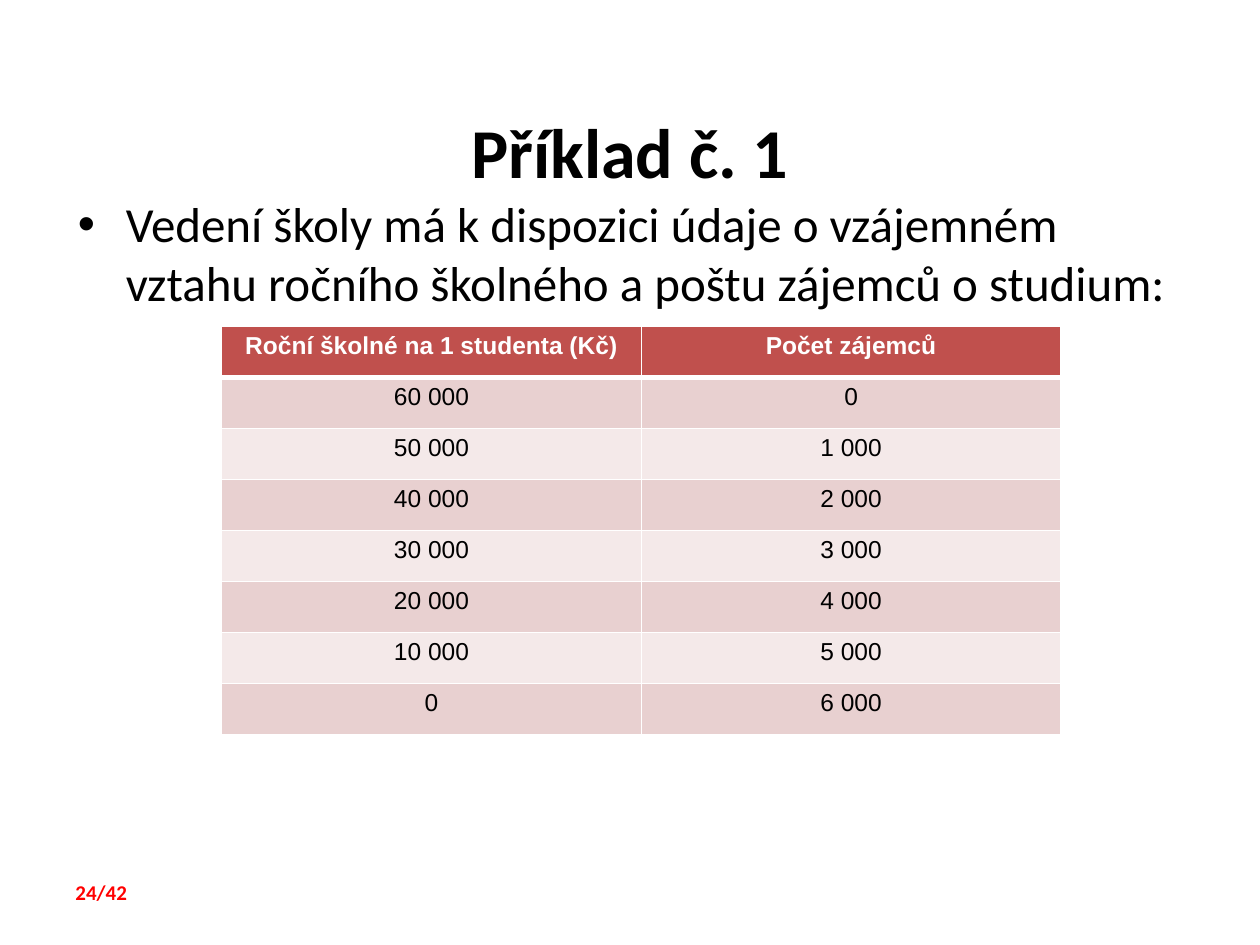
from lxml.etree import SubElement
from pptx import Presentation
from pptx.dml.color import RGBColor
from pptx.enum.text import MSO_ANCHOR as Anchor, PP_ALIGN as Align
from pptx.oxml.ns import qn
from pptx.util import Inches, Pt

# Content
TITLE = "Příklad č. 1"
BULLET = ("Vedení školy má k dispozici údaje o vzájemném "
          "vztahu ročního školného a poštu zájemců o studium:")
PAGE_NUMBER = "24/42"
ROWS = [
    ("Roční školné na 1 studenta (Kč)", "Počet zájemců"),
    ("60 000", "0"),
    ("50 000", "1 000"),
    ("40 000", "2 000"),
    ("30 000", "3 000"),
    ("20 000", "4 000"),
    ("10 000", "5 000"),
    ("0", "6 000"),
]

# Formats
COLORS = {"text": "000000", "page": "FF0000", "white": "FFFFFF",
          "header": "C0504D", "odd": "E8D0D0", "even": "F4E9E9"}
FONTS = {
    "title": {"name": "Calibri", "size": Pt(40), "bold": True},
    "body": {"name": "Calibri", "size": Pt(28), "bold": False},
    "page": {"name": "Calibri", "size": Pt(12), "bold": True},
    "header": {"name": "Arial", "size": Pt(14), "bold": True},
    "cell": {"name": "Arial", "size": Pt(14), "bold": False},
}
TABLE_LEFT, TABLE_TOP = 1.76, 2.59
COLUMN_WIDTH, ROW_HEIGHT = 3.33, 0.405


def rgb(color):
    return RGBColor.from_string(COLORS[color])


def write(paragraph, text, font, color, align=Align.LEFT):
    paragraph.text = text
    paragraph.alignment = align
    for name, value in FONTS[font].items():
        setattr(paragraph.font, name, value)
    paragraph.font.color.rgb = rgb(color)


def add_text_box(slide, left, top, width, height, anchor=Anchor.TOP):
    box = slide.shapes.add_textbox(*map(Inches, (left, top, width, height)))
    box.text_frame.word_wrap = True
    box.text_frame.vertical_anchor = anchor
    return box.text_frame.paragraphs[0]


def add_bullet(paragraph, margin, indent):
    properties = paragraph._p.get_or_add_pPr()
    properties.set("marL", str(Inches(margin)))
    properties.set("indent", str(Inches(indent)))
    SubElement(properties, qn("a:buFont"), typeface="Arial")
    SubElement(properties, qn("a:buChar"), char="•")


def add_borders(cell, widths):
    properties = cell._tc.get_or_add_tcPr()
    for side, width in widths.items():
        line = SubElement(properties, qn(f"a:ln{side}"), w=str(Pt(width)))
        fill = SubElement(line, qn("a:solidFill"))
        SubElement(fill, qn("a:srgbClr"), val=COLORS["white"])


def add_tuition_table(slide):
    column_count = len(ROWS[0])
    frame = slide.shapes.add_table(
        len(ROWS), column_count, Inches(TABLE_LEFT), Inches(TABLE_TOP),
        Inches(COLUMN_WIDTH * column_count), Inches(ROW_HEIGHT * len(ROWS)))
    table = frame.table
    for r, row in enumerate(ROWS):
        is_header = r == 0
        fill = "header" if is_header else "odd" if r % 2 else "even"
        font, color = ("header", "white") if is_header else ("cell", "text")
        borders = {"L": 1, "R": 1, "T": 3 if r == 1 else 1,
                   "B": 3 if is_header else 1}
        for c, text in enumerate(row):
            cell = table.cell(r, c)
            add_borders(cell, borders)
            cell.fill.solid()
            cell.fill.fore_color.rgb = rgb(fill)
            write(cell.text_frame.paragraphs[0], text, font, color, Align.CENTER)


def main():
    presentation = Presentation()
    presentation.slide_width, presentation.slide_height = Inches(10), Inches(7.5)
    slide = presentation.slides.add_slide(presentation.slide_layouts[6])

    # Title
    title = add_text_box(slide, 0.5, 0.57, 9, 1.25, Anchor.MIDDLE)
    write(title, TITLE, "title", "text", Align.CENTER)

    # Introduction
    body = add_text_box(slide, 0.5, 1.49, 9, 5.44)
    add_bullet(body, 0.4, -0.38)
    write(body, BULLET, "body", "text")

    # Page number
    page = add_text_box(slide, 0.5, 6.93, 0.92, 0.3)
    write(page, PAGE_NUMBER, "page", "page")

    # Tuition and applicants
    add_tuition_table(slide)

    presentation.save("out.pptx")


if __name__ == "__main__":
    main()
